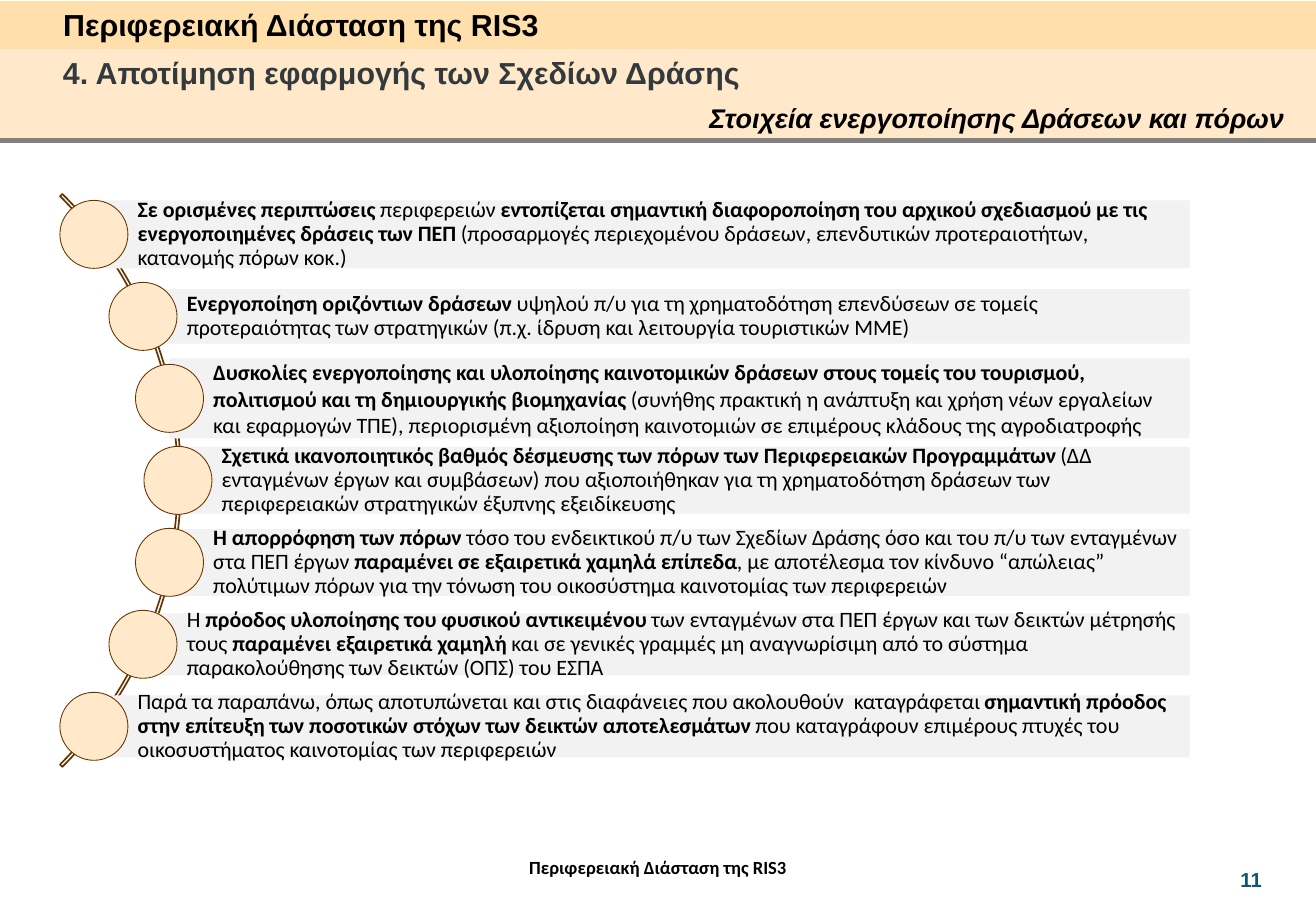
import math

import pptx
import pptx.util
import pptx.dml.color
import pptx.enum.shapes
import pptx.enum.text
import pptx.oxml.ns
from lxml import etree

Inches = pptx.util.Inches
Pt = pptx.util.Pt
RGBColor = pptx.dml.color.RGBColor
MSO_SHAPE = pptx.enum.shapes.MSO_SHAPE
PP_ALIGN = pptx.enum.text.PP_ALIGN
MSO_ANCHOR = pptx.enum.text.MSO_ANCHOR

BLACK = RGBColor(0x00, 0x00, 0x00)
SLATE = RGBColor(0x33, 0x3A, 0x3E)
TEAL = RGBColor(0x0E, 0x57, 0x72)
GREY = RGBColor(0x80, 0x80, 0x80)
PALE_GREY = RGBColor(0xF2, 0xF2, 0xF2)
AMBER = RGBColor(0xFF, 0xDF, 0xAB)
CREAM = RGBColor(0xFF, 0xE9, 0xCA)
BROWN = RGBColor(0x66, 0x33, 0x00)

SLIDE_WIDTH, SLIDE_HEIGHT = 10.83, 7.5

FINDINGS = [
    (0.56, 0.9, [
        ("Σε ορισμένες περιπτώσεις ", True),
        ("περιφερειών ", False),
        ("εντοπίζεται σημαντική διαφοροποίηση του αρχικού σχεδιασμού με τις "
         "ενεργοποιημένες δράσεις των ΠΕΠ ", True),
        ("(προσαρμογές περιεχομένου δράσεων, επενδυτικών προτεραιοτήτων, "
         "κατανομής πόρων κοκ.)", False)]),
    (0.45, 0.9, [
        ("Ενεργοποίηση οριζόντιων δράσεων ", True),
        ("υψηλού π/υ για τη χρηματοδότηση επενδύσεων σε τομείς προτεραιότητας "
         "των στρατηγικών (π.χ. ίδρυση και λειτουργία τουριστικών ΜΜΕ)", False)]),
    (0.66, 1.0, [
        ("Δυσκολίες ενεργοποίησης και υλοποίησης καινοτομικών δράσεων στους "
         "τομείς του τουρισμού, πολιτισμού και τη δημιουργικής βιομηχανίας", True),
        (" (συνήθης πρακτική η ανάπτυξη και χρήση νέων εργαλείων και εφαρμογών "
         "ΤΠΕ), περιορισμένη αξιοποίηση καινοτομιών σε επιμέρους κλάδους της "
         "αγροδιατροφής", False)]),
    (0.55, 0.9, [
        ("Σχετικά ικανοποιητικός βαθμός δέσμευσης των πόρων των Περιφερειακών "
         "Προγραμμάτων ", True),
        ("(ΔΔ ενταγμένων έργων και συμβάσεων) που αξιοποιήθηκαν για τη "
         "χρηματοδότηση δράσεων των περιφερειακών στρατηγικών έξυπνης "
         "εξειδίκευσης", False)]),
    (0.55, 0.9, [
        ("Η απορρόφηση των πόρων ", True),
        ("τόσο του ενδεικτικού π/υ των Σχεδίων Δράσης όσο και του π/υ των "
         "ενταγμένων στα ΠΕΠ έργων ", False),
        ("παραμένει σε εξαιρετικά χαμηλά επίπεδα", True),
        (", με αποτέλεσμα τον κίνδυνο “απώλειας” πολύτιμων πόρων για την "
         "τόνωση του οικοσύστημα καινοτομίας των περιφερειών", False)]),
    (0.51, 0.9, [
        ("Η ", False),
        ("πρόοδος υλοποίησης του φυσικού αντικειμένου ", True),
        ("των ενταγμένων στα ΠΕΠ έργων και των δεικτών μέτρησής τους ", False),
        ("παραμένει εξαιρετικά χαμηλή ", True),
        ("και σε γενικές γραμμές μη αναγνωρίσιμη από το σύστημα "
         "παρακολούθησης των δεικτών (ΟΠΣ) του ΕΣΠΑ", False)]),
    (0.51, 0.9, [
        ("Παρά τα παραπάνω, όπως αποτυπώνεται και στις διαφάνειες που "
         "ακολουθούν  καταγράφεται ", False),
        ("σημαντική πρόοδος στην επίτευξη των ποσοτικών στόχων των δεικτών "
         "αποτελεσμάτων ", True),
        ("που καταγράφουν επιμέρους πτυχές του οικοσυστήματος καινοτομίας των "
         "περιφερειών", False)]),
]


def add_figure(slide, preset, box, fill=None, outline=None, weight=0):
    figure = slide.shapes.add_shape(preset, *map(Inches, box))
    figure.shadow.inherit = False
    if fill is None:
        figure.fill.background()
    else:
        figure.fill.solid()
        figure.fill.fore_color.rgb = fill
    if outline is None:
        figure.line.fill.background()
    else:
        figure.line.color.rgb = outline
        figure.line.width = Pt(weight)
    return figure


def style_run(run, size, color, bold=True, italic=False, font="Arial"):
    run.font.name = font
    run.font.size = Pt(size)
    run.font.color.rgb = color
    run.font.bold = bold
    run.font.italic = italic


def write_line(holder, text, size, color, align=PP_ALIGN.LEFT, wrap=True, **style):
    frame = holder.text_frame
    frame.text = text
    frame.word_wrap = wrap
    frame.auto_size = pptx.enum.text.MSO_AUTO_SIZE.NONE
    frame.vertical_anchor = MSO_ANCHOR.TOP
    paragraph = frame.paragraphs[0]
    paragraph.alignment = align
    paragraph.line_spacing = 1.0
    paragraph.space_before = Pt(0)
    style_run(paragraph.runs[0], size, color, **style)


def add_header(slide, left, top, width):
    upper, lower = 0.4, 0.75
    bottom = top + upper + lower
    add_figure(slide, MSO_SHAPE.RECTANGLE, (left, top, width, upper), AMBER)
    add_figure(slide, MSO_SHAPE.RECTANGLE, (left, top + upper, width, lower), CREAM)
    rule = slide.shapes.add_connector(
        pptx.enum.shapes.MSO_CONNECTOR.STRAIGHT,
        *map(Inches, (left, bottom, left + width, bottom)))
    rule.line.color.rgb = GREY
    rule.line.width = Pt(3)
    etree.SubElement(rule.element.spPr, pptx.oxml.ns.qn("a:effectLst"))

    title = slide.shapes.title
    slide.shapes.element.append(title.element)
    title.left, title.top = Inches(left + 0.42), Inches(top - 0.01)
    title.width, title.height = Inches(4.23), Inches(0.4)
    write_line(title, "Περιφερειακή Διάσταση της RIS3", 18, BLACK, wrap=False)

    section = slide.shapes.add_textbox(
        *map(Inches, (left + 0.42, top + 0.39, 5.97, 0.4)))
    write_line(section, "4. Αποτίμηση εφαρμογής των Σχεδίων Δράσης", 18, SLATE,
               wrap=False)
    subject = slide.shapes.add_textbox(
        *map(Inches, (left + 5.74, top + 0.78, 5.07, 0.37)))
    write_line(subject, "Στοιχεία ενεργοποίησης Δράσεων και πόρων", 16, BLACK,
               italic=True)


def add_finding(slide, left, top, width, height, spacing, segments):
    bar = add_figure(slide, MSO_SHAPE.RECTANGLE, (left, top, width, height), PALE_GREY)
    frame = bar.text_frame
    frame.word_wrap = True
    frame.vertical_anchor = MSO_ANCHOR.MIDDLE
    frame.margin_left = Inches(0.36)
    frame.margin_top = frame.margin_right = frame.margin_bottom = Inches(0.04)
    paragraph = frame.paragraphs[0]
    paragraph.alignment = PP_ALIGN.LEFT
    paragraph.line_spacing = spacing
    for text, bold in segments:
        run = paragraph.add_run()
        run.text = text
        style_run(run, 13, BLACK, bold, font="Calibri")


def add_findings_arc(slide, left, top, width, height):
    dot, pitch, arc_size, dot_radius = 0.56, 0.675, 6.67, 3.31
    arc_x, arc_y = left - 2.335, top + height / 2
    arc = add_figure(
        slide, MSO_SHAPE.BLOCK_ARC,
        (arc_x - arc_size / 2, arc_y - arc_size / 2, arc_size, arc_size),
        outline=BROWN, weight=1)
    arc.adjustments[0] = 189
    arc.adjustments[1] = 27
    arc.adjustments[2] = 0.004
    for index, (bar_height, spacing, segments) in enumerate(FINDINGS):
        offset = (index - (len(FINDINGS) - 1) / 2) * pitch
        x = arc_x + math.sqrt(dot_radius ** 2 - offset ** 2)
        y = arc_y + offset
        add_finding(slide, x, y - bar_height / 2, left + width - x, bar_height,
                    spacing, segments)
        add_figure(slide, MSO_SHAPE.OVAL, (x - dot / 2, y - dot / 2, dot, dot),
                   CREAM, BROWN, 0.5)


def add_footer(slide, left, top):
    footer = slide.shapes.add_textbox(*map(Inches, (left, top, 5.19, 0.38)))
    write_line(footer, "Περιφερειακή Διάσταση της RIS3", 11, BLACK,
               align=PP_ALIGN.CENTER, font="Calibri")
    frame = footer.text_frame
    frame.margin_left = frame.margin_top = frame.margin_right = frame.margin_bottom = 0
    page = slide.shapes.add_textbox(*map(Inches, (left + 7.29, top + 0.04, 0.52, 0.3)))
    write_line(page, "11", 12, TEAL)


def main():
    deck = pptx.Presentation()
    deck.slide_width = Inches(SLIDE_WIDTH)
    deck.slide_height = Inches(SLIDE_HEIGHT)
    slide = deck.slides.add_slide(deck.slide_layouts[5])
    add_header(slide, 0, 0.01, SLIDE_WIDTH)
    add_findings_arc(slide, 0.49, 1.65, 9.3, 4.61)
    add_footer(slide, 2.82, 7.05)
    deck.save("out.pptx")


if __name__ == "__main__":
    main()
